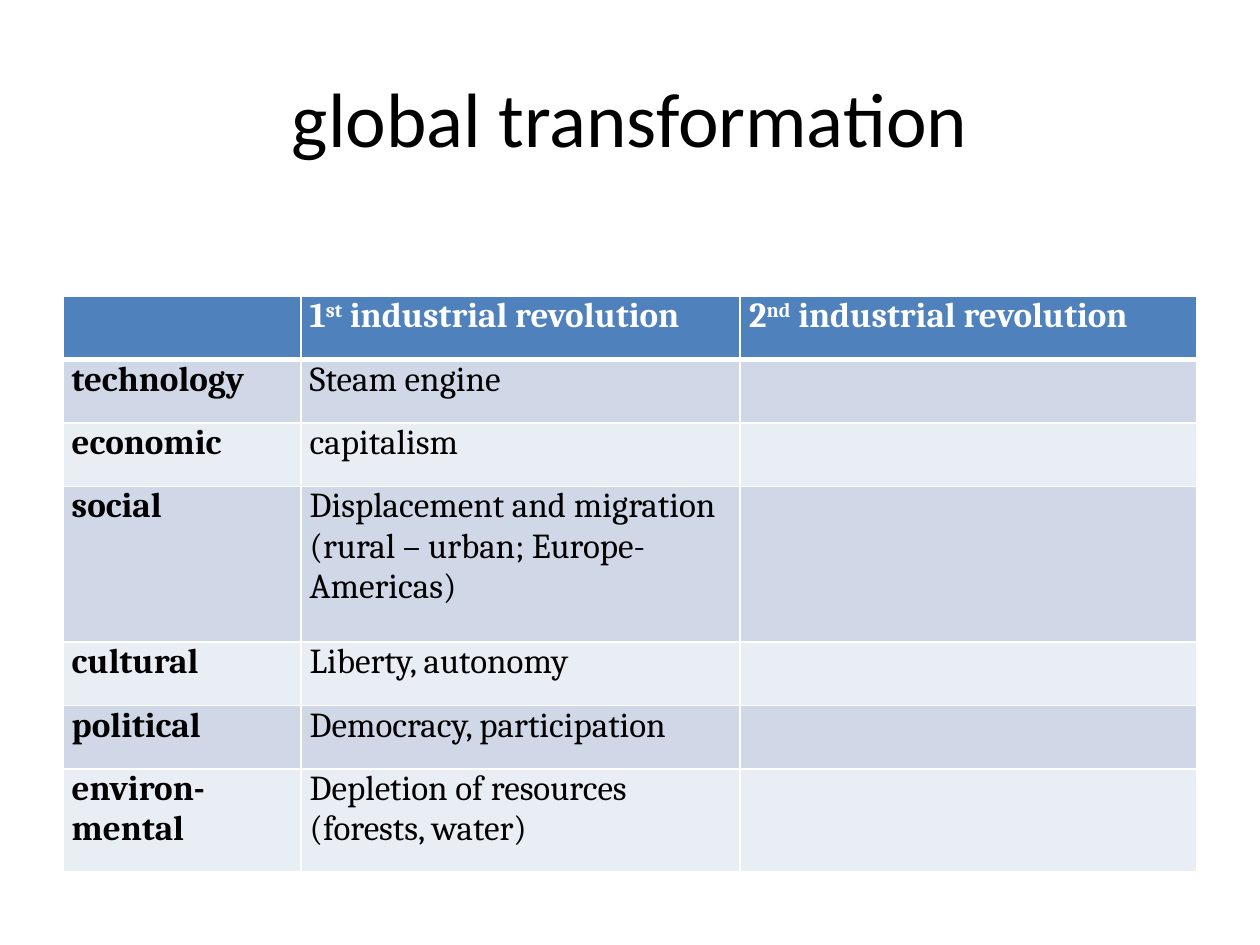
"""Build a slide comparing the transformations of two industrial revolutions."""
import pptx
import pptx.dml.color
import pptx.enum.text
import pptx.oxml
import pptx.oxml.ns
import pptx.util

Pt = pptx.util.Pt
RGBColor = pptx.dml.color.RGBColor

TITLE = "global transformation"
HEADERS = [
    [],
    [("1", False), ("st", True), (" industrial revolution", False)],
    [("2", False), ("nd", True), (" industrial revolution", False)],
]
ROWS = [
    ("technology", "Steam engine"),
    ("economic", "capitalism"),
    ("social", "Displacement and migration (rural – urban; Europe- Americas)"),
    ("cultural", "Liberty, autonomy"),
    ("political", "Democracy, participation"),
    ("environ-mental", "Depletion of resources (forests, water)"),
]
COLUMN_WIDTHS = [136, 251, 261]
ROW_HEIGHTS = [36.2, 36.2, 36.2, 89, 36.2, 36.2, 59]

BLACK = RGBColor(0x00, 0x00, 0x00)
WHITE = RGBColor(0xFF, 0xFF, 0xFF)
HEADER_BLUE = RGBColor(0x4F, 0x81, 0xBD)
BANDS = [RGBColor(0xD0, 0xD8, 0xE8), RGBColor(0xE9, 0xED, 0xF4)]


def add_run(paragraph, text, font, size, color, bold=False, superscript=False):
    run = paragraph.add_run()
    run.text = text
    run.font.name = font
    run.font.size = Pt(size)
    run.font.color.rgb = color
    run.font.bold = bold
    if superscript:
        run._r.get_or_add_rPr().set("baseline", "30000")


def add_borders(cell, widths):
    properties = cell._tc.get_or_add_tcPr()
    for side, width in widths.items():
        properties.append(pptx.oxml.parse_xml(
            f'<a:ln{side} {pptx.oxml.ns.nsdecls("a")} w="{Pt(width)}">'
            f'<a:solidFill><a:srgbClr val="{WHITE}"/></a:solidFill></a:ln{side}>'))


def fill_cell(cell, runs, row, bold):
    cell.margin_left = cell.margin_right = Pt(5)
    cell.margin_top = cell.margin_bottom = 0
    add_borders(cell, {"L": 1, "R": 1, "T": 3 if row == 1 else 1, "B": 3 if row == 0 else 1})
    cell.fill.solid()
    cell.fill.fore_color.rgb = BANDS[(row - 1) % 2] if row else HEADER_BLUE
    for text, superscript in runs:
        add_run(cell.text_frame.paragraphs[0], text, "Cambria", 20,
                BLACK if row else WHITE, bold, superscript)


def main():
    presentation = pptx.Presentation()
    presentation.slide_width, presentation.slide_height = Pt(720), Pt(540)
    slide = presentation.slides.add_slide(presentation.slide_layouts[5])

    title = slide.shapes.title
    title.left, title.top, title.width, title.height = Pt(36), Pt(21.6), Pt(648), Pt(90)
    title.text_frame.vertical_anchor = pptx.enum.text.MSO_ANCHOR.MIDDLE
    paragraph = title.text_frame.paragraphs[0]
    paragraph.alignment = pptx.enum.text.PP_ALIGN.CENTER
    add_run(paragraph, TITLE, "Calibri", 44, BLACK)

    grid = [HEADERS] + [[[(label, False)], [(effect, False)], []] for label, effect in ROWS]
    table = slide.shapes.add_table(
        len(grid), len(HEADERS), Pt(36), Pt(169.4),
        Pt(sum(COLUMN_WIDTHS)), Pt(sum(ROW_HEIGHTS))).table
    table.horz_banding = False
    for column, width in zip(table.columns, COLUMN_WIDTHS):
        column.width = Pt(width)
    for row, height in enumerate(ROW_HEIGHTS):
        table.rows[row].height = Pt(height)
        for column, runs in enumerate(grid[row]):
            fill_cell(table.cell(row, column), runs, row, bold=row == 0 or column == 0)

    presentation.save("out.pptx")


if __name__ == "__main__":
    main()
